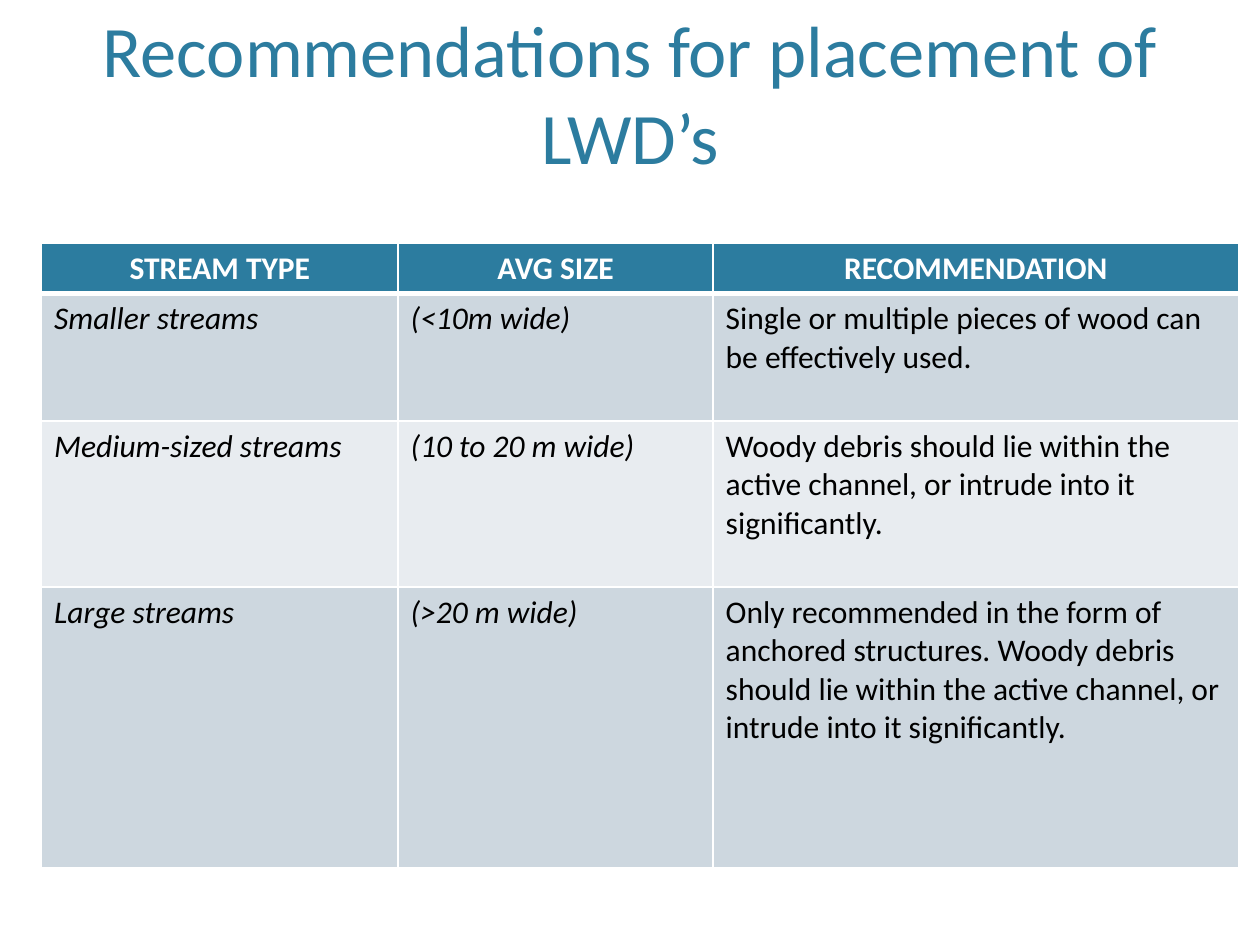
from typing import NamedTuple

from lxml import etree
from pptx import Presentation
from pptx.dml.color import RGBColor
from pptx.enum.text import MSO_ANCHOR, PP_ALIGN
from pptx.oxml.ns import qn
from pptx.util import Inches, Pt

CENTER, LEFT = PP_ALIGN.CENTER, PP_ALIGN.LEFT
TOP = MSO_ANCHOR.TOP
FONT = "Calibri"
COLORS = {
    "accent": "2C7C9F",
    "band_dark": "CDD7DF",
    "band_light": "E8ECF0",
    "white": "FFFFFF",
    "black": "000000",
}


class Row(NamedTuple):
    height: float
    fill: str
    texts: tuple[str, str, str]


COL_WIDTHS = (2.83, 2.5, 4.17)
ROWS = (
    Row(0.4, "accent", ("STREAM TYPE", "AVG SIZE", "RECOMMENDATION")),
    Row(1.01, "band_dark", (
        "Smaller streams", "(<10m wide)",
        "Single or multiple pieces of wood can be effectively used.")),
    Row(1.32, "band_light", (
        "Medium-sized streams", "(10 to 20 m wide)",
        "Woody debris should lie within the active channel, "
        "or intrude into it significantly.")),
    Row(2.23, "band_dark", (
        "Large streams", "(>20 m wide)",
        "Only recommended in the form of anchored structures. "
        "Woody debris should lie within the active channel, "
        "or intrude into it significantly.")),
)


def color(name: str) -> RGBColor:
    return RGBColor.from_string(COLORS[name])


def write(tf, text: str, size: float, fill: str, align,
          bold: bool = False, italic: bool = False) -> None:
    tf.text = text
    p = tf.paragraphs[0]
    p.alignment = align
    font = p.runs[0].font
    font.name, font.size = FONT, Pt(size)
    font.bold, font.italic = bold, italic
    font.color.rgb = color(fill)


def set_borders(cell, bottom: float, top: float) -> None:
    """Draw white cell borders; they must precede the fill in tcPr."""
    tc_pr = cell._tc.get_or_add_tcPr()
    widths = {"a:lnL": 1, "a:lnR": 1, "a:lnT": top, "a:lnB": bottom}
    for i, (tag, width) in enumerate(widths.items()):
        ln = etree.Element(qn(tag), w=str(Pt(width)))
        fill = etree.SubElement(ln, qn("a:solidFill"))
        etree.SubElement(fill, qn("a:srgbClr"), val=COLORS["white"])
        tc_pr.insert(i, ln)


def add_title(s, text: str) -> None:
    tf = s.shapes.add_textbox(Inches(0.6), Inches(0.04),
                              Inches(8.8), Inches(1.4)).text_frame
    tf.word_wrap = True
    tf.vertical_anchor = TOP
    tf.margin_top = tf.margin_bottom = 0
    write(tf, text, 41.4, "accent", CENTER)


def add_stream_table(s) -> None:
    height = sum(row.height for row in ROWS)
    table = s.shapes.add_table(
        len(ROWS), len(COL_WIDTHS), Inches(0.33), Inches(1.93),
        Inches(sum(COL_WIDTHS)), Inches(height)).table
    for col, width in zip(table.columns, COL_WIDTHS):
        col.width = Inches(width)
    for r, row in enumerate(ROWS):
        table.rows[r].height = Inches(row.height)
        header = r == 0
        for c, text in enumerate(row.texts):
            cell = table.cell(r, c)
            cell.fill.solid()
            cell.fill.fore_color.rgb = color(row.fill)
            set_borders(cell, bottom=3 if header else 1, top=3 if r == 1 else 1)
            write(cell.text_frame, text, 18, "white" if header else "black",
                  CENTER if header else LEFT, bold=header,
                  italic=not header and c < 2)


def main() -> None:
    prs = Presentation()
    prs.slide_width, prs.slide_height = Inches(10), Inches(7.5)
    s = prs.slides.add_slide(prs.slide_layouts[6])

    # Heading
    add_title(s, "Recommendations for placement of LWD’s")

    # Advice by stream size
    add_stream_table(s)

    prs.save("out.pptx")


if __name__ == "__main__":
    main()
